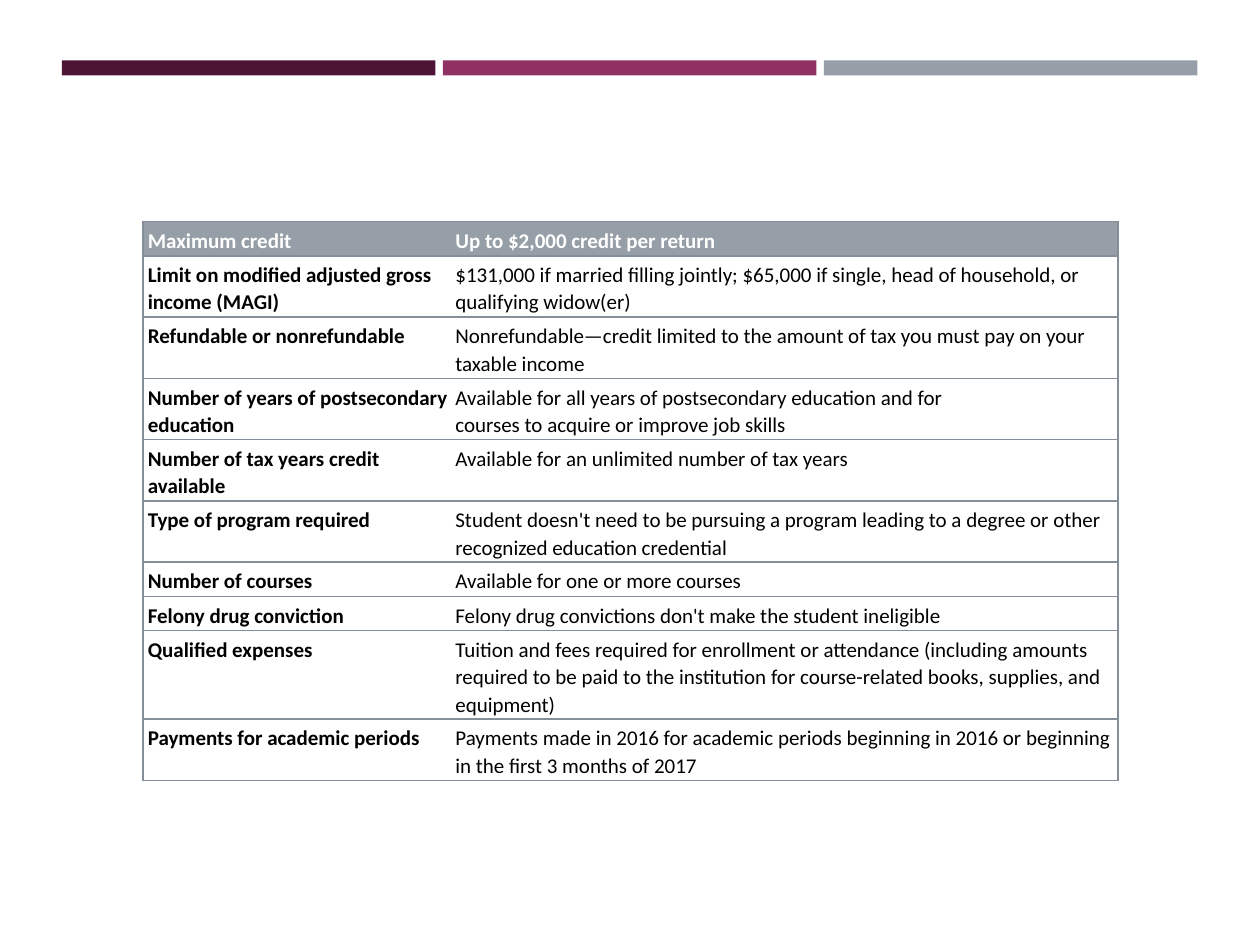
import pptx
import pptx.dml.color
import pptx.enum.shapes
import pptx.enum.text
import pptx.oxml.ns
import pptx.util
from lxml import etree
from pptx.util import Cm

RGBColor = pptx.dml.color.RGBColor
PLUM = RGBColor(0x4D, 0x14, 0x34)
MAGENTA = RGBColor(0x90, 0x31, 0x63)
GRAY = RGBColor(0x96, 0x9F, 0xA7)
BORDER = RGBColor(0x85, 0x8F, 0x99)
WHITE = RGBColor(0xFF, 0xFF, 0xFF)
BLACK = RGBColor(0, 0, 0)

FONT = "Calibri"
COLUMN_WIDTHS = (6.25, 13.41)
ONE_LINE, TWO_LINES, THREE_LINES = 0.69, 1.22, 1.78

# Row height in cm, label, paragraphs of the description
ROWS = [
    (ONE_LINE, "Maximum credit", ["Up to $2,000 credit per return"]),
    (TWO_LINES, "Limit on modified adjusted gross income (MAGI)",
     ["$131,000 if married filling jointly; $65,000 if single, "
      "head of household, or qualifying widow(er)"]),
    (TWO_LINES, "Refundable or nonrefundable",
     ["Nonrefundable—credit limited to the amount of tax "
      "you must pay on your taxable income"]),
    (TWO_LINES, "Number of years of postsecondary education",
     ["Available for all years of postsecondary education and for",
      "courses to acquire or improve job skills"]),
    (TWO_LINES, "Number of tax years credit available",
     ["Available for an unlimited number of tax years"]),
    (TWO_LINES, "Type of program required",
     ["Student doesn't need to be pursuing a program leading to "
      "a degree or other recognized education credential"]),
    (ONE_LINE, "Number of courses", ["Available for one or more courses"]),
    (ONE_LINE, "Felony drug conviction",
     ["Felony drug convictions don't make the student ineligible"]),
    (THREE_LINES, "Qualified expenses",
     ["Tuition and fees required for enrollment or attendance (including "
      "amounts required to be paid to the institution for course-related "
      "books, supplies, and equipment)"]),
    (TWO_LINES, "Payments for academic periods",
     ["Payments made in 2016 for academic periods beginning in 2016 "
      "or beginning in the first 3 months of 2017"]),
]


def add_bar(page, left, color):
    bar = page.shapes.add_shape(
        pptx.enum.shapes.MSO_SHAPE.RECTANGLE,
        Cm(left), Cm(1.22), Cm(7.53), Cm(0.3))
    bar.shadow.inherit = False
    bar.fill.solid()
    bar.fill.fore_color.rgb = color
    bar.line.fill.background()


def set_borders(cell, visible_sides):
    qn = pptx.oxml.ns.qn
    properties = cell._tc.get_or_add_tcPr()
    for side in "LRTB":
        line = etree.SubElement(properties, qn(f"a:ln{side}"),
                                w=str(pptx.util.Pt(1)))
        if side in visible_sides:
            fill = etree.SubElement(line, qn("a:solidFill"))
            etree.SubElement(fill, qn("a:srgbClr"), val=str(BORDER))
        else:
            etree.SubElement(line, qn("a:noFill"))


def write_cell(cell, paragraphs, color, bold, indent):
    cell.margin_left, cell.margin_top = Cm(0.05), Cm(0.1)
    cell.margin_right, cell.margin_bottom = Cm(0.08), Cm(0.03)
    frame = cell.text_frame
    for index, text in enumerate(paragraphs):
        para = frame.add_paragraph() if index else frame.paragraphs[0]
        para.line_spacing = 1.07
        para._p.get_or_add_pPr().set("marL", str(Cm(indent)))
        span = para.add_run()
        span.text = text
        span.font.name = FONT
        span.font.size = pptx.util.Pt(12)
        span.font.bold = bold
        span.font.color.rgb = color


def add_credit_table(page):
    height = sum(row[0] for row in ROWS)
    table = page.shapes.add_table(
        len(ROWS), len(COLUMN_WIDTHS), Cm(2.88), Cm(4.47),
        Cm(sum(COLUMN_WIDTHS)), Cm(height)).table
    table.first_row = table.horz_banding = False
    for column, width in zip(table.columns, COLUMN_WIDTHS):
        column.width = Cm(width)

    for row_index, (row_height, label, description) in enumerate(ROWS):
        table.rows[row_index].height = Cm(row_height)
        header = row_index == 0
        color = WHITE if header else BLACK
        label_cell = table.cell(row_index, 0)
        detail_cell = table.cell(row_index, 1)
        write_cell(label_cell, [label], color, True, 0.05)
        write_cell(detail_cell, description, color, header, 0)
        set_borders(label_cell, "LTB")
        set_borders(detail_cell, "RTB")
        for cell in (label_cell, detail_cell):
            if header:
                cell.vertical_anchor = pptx.enum.text.MSO_ANCHOR.BOTTOM
                cell.fill.solid()
                cell.fill.fore_color.rgb = GRAY
            else:
                cell.fill.background()


def main():
    deck = pptx.Presentation()
    deck.slide_width, deck.slide_height = Cm(25.4), Cm(19.05)
    page = deck.slides.add_slide(deck.slide_layouts[6])

    # Three bars across the top
    for index, color in enumerate((PLUM, MAGENTA, GRAY)):
        add_bar(page, 1.25 + index * 7.68, color)

    # Credit rules
    add_credit_table(page)

    deck.save("out.pptx")


if __name__ == "__main__":
    main()
